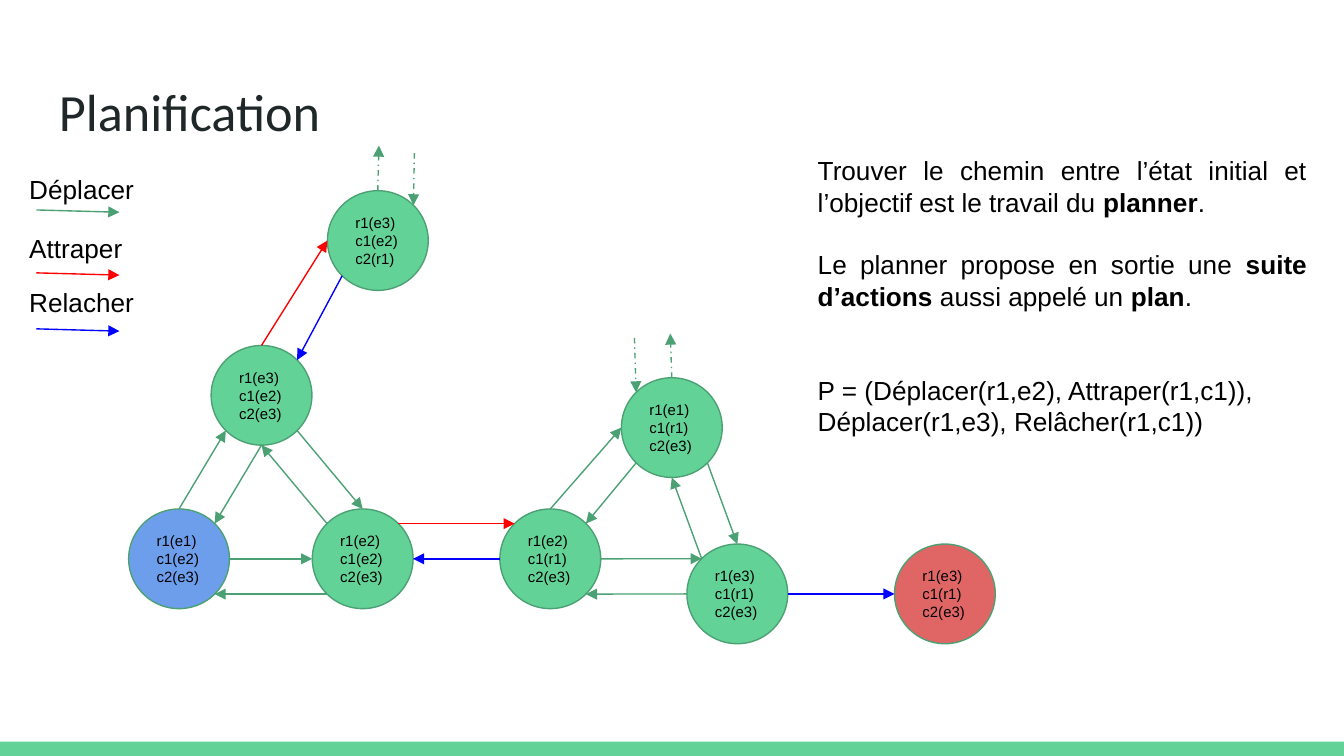
"""Builds the planning slide: a state graph, its legend and an explanation."""
import math
from dataclasses import dataclass

from lxml import etree
from pptx import Presentation
from pptx import util as u
from pptx.dml.color import RGBColor
from pptx.enum import dml, shapes, text
from pptx.oxml.ns import qn


@dataclass(frozen=True)
class Theme:
    """Colours, fonts and type sizes of the slide."""
    green: str = "63D297"
    blue: str = "6D9EEB"
    red: str = "E06666"
    move: str = "4BA173"
    grab: str = "FF0000"
    release: str = "0000FF"
    title: str = "202729"
    black: str = "000000"
    title_font: str = "Calibri"
    body_font: str = "Arial"
    title_size: float = 28
    body_size: float = 14
    state_size: float = 8
    line_width: float = 0.75


THEME = Theme()
STATE_SIZE = (54, 53.4)
SITES = ("top", "top left", "left", "bottom left",
         "bottom", "bottom right", "right", "top right")

STATES = {
    "start": (68.9, 272.7, THEME.blue, "r1(e1) c1(e2) c2(e3)"),
    "at e2": (167.3, 272.7, THEME.green, "r1(e2) c1(e2) c2(e3)"),
    "at e3": (113.1, 185.1, THEME.green, "r1(e3) c1(e2) c2(e3)"),
    "holding c2": (175.4, 102.2, THEME.green, "r1(e3) c1(e2) c2(r1)"),
    "holding e2": (267.8, 272.7, THEME.green, "r1(e2) c1(r1) c2(e3)"),
    "holding e1": (332.9, 202.4, THEME.green, "r1(e1) c1(r1) c2(e3)"),
    "holding e3": (368, 291.5, THEME.green, "r1(e3) c1(r1) c2(e3)"),
    "goal": (479.2, 291.5, THEME.red, "r1(e3) c1(r1) c2(e3)"),
}

TRANSITIONS = (
    ("start", "top", "at e3", "bottom left", THEME.move),
    ("start", "right", "at e2", "left", THEME.move),
    ("at e3", "bottom right", "at e2", "top", THEME.move),
    ("at e3", "bottom", "start", "top right", THEME.move),
    ("at e2", "bottom left", "start", "bottom right", THEME.move),
    ("at e2", "top left", "at e3", "bottom", THEME.move),
    ("at e3", "top", "holding c2", "left", THEME.grab),
    ("holding c2", "bottom left", "at e3", "top right", THEME.release),
    ("at e2", "top right", "holding e2", "top left", THEME.grab),
    ("holding e2", "left", "at e2", "right", THEME.release),
    ("holding e2", "top", "holding e1", "left", THEME.move),
    ("holding e1", "bottom left", "holding e2", "top right", THEME.move),
    ("holding e2", "right", "holding e3", "top left", THEME.move),
    ("holding e3", "left", "holding e2", "bottom right", THEME.move),
    ("holding e3", "top left", "holding e1", "bottom", THEME.move),
    ("holding e1", "bottom right", "holding e3", "top", THEME.move),
    ("holding e3", "right", "goal", "left", THEME.release),
)

OPEN_TRANSITIONS = (
    ("holding c2", "top", (203, 78), True),
    ("holding c2", "top right", (222, 82), False),
    ("holding e1", "top left", (339.9, 181), False),
    ("holding e1", "top", (359.1, 178.7), True),
)

LEGEND = (
    ("Déplacer", 85.7, 112.5, THEME.move),
    ("Attraper", 117.4, 146.2, THEME.grab),
    ("Relacher", 146.2, 176.2, THEME.release),
)

EXPLANATION = (
    ("Trouver le chemin entre l’état initial et l’objectif est le travail du "
     "**planner**.", text.PP_ALIGN.JUSTIFY, 0),
    ("Le planner propose en sortie une **suite d’actions** aussi appelé un "
     "**plan**.", text.PP_ALIGN.JUSTIFY, 16.8),
    ("P = (Déplacer(r1,e2), Attraper(r1,c1)), Déplacer(r1,e3), "
     "Relâcher(r1,c1))", text.PP_ALIGN.LEFT, 33.6),
)


def apply_format(target, values):
    """Set each attribute of the target from the format values."""
    for name, value in values.items():
        setattr(target, name, value)


def paint(fill, color):
    """Give a fill one solid colour."""
    fill.solid()
    fill.fore_color.rgb = RGBColor.from_string(color)


def write(shape, paragraphs, size, font=THEME.body_font, color=THEME.black,
          anchor=text.MSO_ANCHOR.TOP):
    """Write (wording, alignment, space before) paragraphs, ** marking bold."""
    frame = shape.text_frame
    inset = u.Pt(7.2)
    apply_format(frame, {
        "word_wrap": True, "vertical_anchor": anchor, "margin_left": inset,
        "margin_top": inset, "margin_right": inset, "margin_bottom": inset})
    for index, (wording, alignment, gap) in enumerate(paragraphs):
        paragraph = frame.add_paragraph() if index else frame.paragraphs[0]
        apply_format(paragraph, {"alignment": alignment, "space_before": u.Pt(gap)})
        for part, words in enumerate(wording.split("**")):
            run = paragraph.add_run()
            run.text = words
            apply_format(run.font, {"name": font, "size": u.Pt(size),
                                    "bold": part % 2 == 1})
            run.font.color.rgb = RGBColor.from_string(color)


def add_text(slide, box, paragraphs, size, **style):
    """Add a text box at (left, top, width, height)."""
    write(slide.shapes.add_textbox(*map(u.Pt, box)), paragraphs, size, **style)


def add_state(slide, left, top, color, facts):
    """Add a round state listing its facts."""
    shape = slide.shapes.add_shape(
        shapes.MSO_SHAPE.OVAL, *map(u.Pt, (left, top, *STATE_SIZE)))
    shape.shadow.inherit = False
    paint(shape.fill, color)
    paint(shape.line.fill, THEME.move)
    shape.line.width = u.Pt(THEME.line_width)
    write(shape, [(fact, text.PP_ALIGN.LEFT, 0) for fact in facts.split()],
          THEME.state_size, anchor=text.MSO_ANCHOR.MIDDLE)
    return shape


def site_point(state, site):
    """Return the place of a connection site on a state's outline."""
    left, top = STATES[state][:2]
    width, height = STATE_SIZE
    angle = math.radians(90 + 45 * SITES.index(site))
    return (left + width / 2 * (1 + math.cos(angle)),
            top + height / 2 * (1 - math.sin(angle)))


def add_arrow(slide, start, end, color, dash=None):
    """Add a straight arrow between two points."""
    connector = slide.shapes.add_connector(
        shapes.MSO_CONNECTOR.STRAIGHT, *map(u.Pt, (*start, *end)))
    paint(connector.line.fill, color)
    apply_format(connector.line, {"width": u.Pt(THEME.line_width),
                                  "dash_style": dash})
    etree.SubElement(connector.line._get_or_add_ln(), qn("a:tailEnd"),
                     type="triangle", w="med", len="med")
    etree.SubElement(connector.element.spPr, qn("a:effectLst"))
    return connector


def join(connector, tag, shape, site):
    """Attach one connector end to a site of a round state."""
    properties = connector.element.nvCxnSpPr.cNvCxnSpPr
    etree.SubElement(properties, qn(tag), id=str(shape.shape_id),
                     idx=str(SITES.index(site)))


def main():
    """Build and save the slide."""
    presentation = Presentation()
    apply_format(presentation, {"slide_width": u.Pt(720), "slide_height": u.Pt(405)})
    slide = presentation.slides.add_slide(presentation.slide_layouts[6])

    footer = slide.shapes.add_shape(
        shapes.MSO_SHAPE.RECTANGLE, *map(u.Pt, (0, 397.4, 720, 7.6)))
    footer.shadow.inherit = False
    paint(footer.fill, THEME.green)
    footer.line.fill.background()
    add_text(slide, (24.5, 35.3, 671, 45.4),
             [("Planification", text.PP_ALIGN.LEFT, 0)], THEME.title_size,
             font=THEME.title_font, color=THEME.title)

    states = {name: add_state(slide, *state) for name, state in STATES.items()}
    for source, leaving, target, entering, color in TRANSITIONS:
        arrow = add_arrow(slide, site_point(source, leaving),
                          site_point(target, entering), color)
        join(arrow, "a:stCxn", states[source], leaving)
        join(arrow, "a:endCxn", states[target], entering)
    for state, site, outside, outgoing in OPEN_TRANSITIONS:
        ends = (site_point(state, site), outside)
        arrow = add_arrow(slide, *(ends if outgoing else ends[::-1]),
                          THEME.move, dml.MSO_LINE.DASH_DOT)
        join(arrow, "a:stCxn" if outgoing else "a:endCxn", states[state], site)

    for label, label_top, arrow_top, color in LEGEND:
        add_text(slide, (8.6, label_top, 90.7, 31.7),
                 [(label, text.PP_ALIGN.LEFT, 0)], THEME.body_size)
        add_arrow(slide, (19.5, arrow_top), (64, arrow_top + 1.2), color)
    add_text(slide, (431, 75.6, 276.2, 177.8), EXPLANATION, THEME.body_size)
    presentation.save("out.pptx")


if __name__ == "__main__":
    main()
